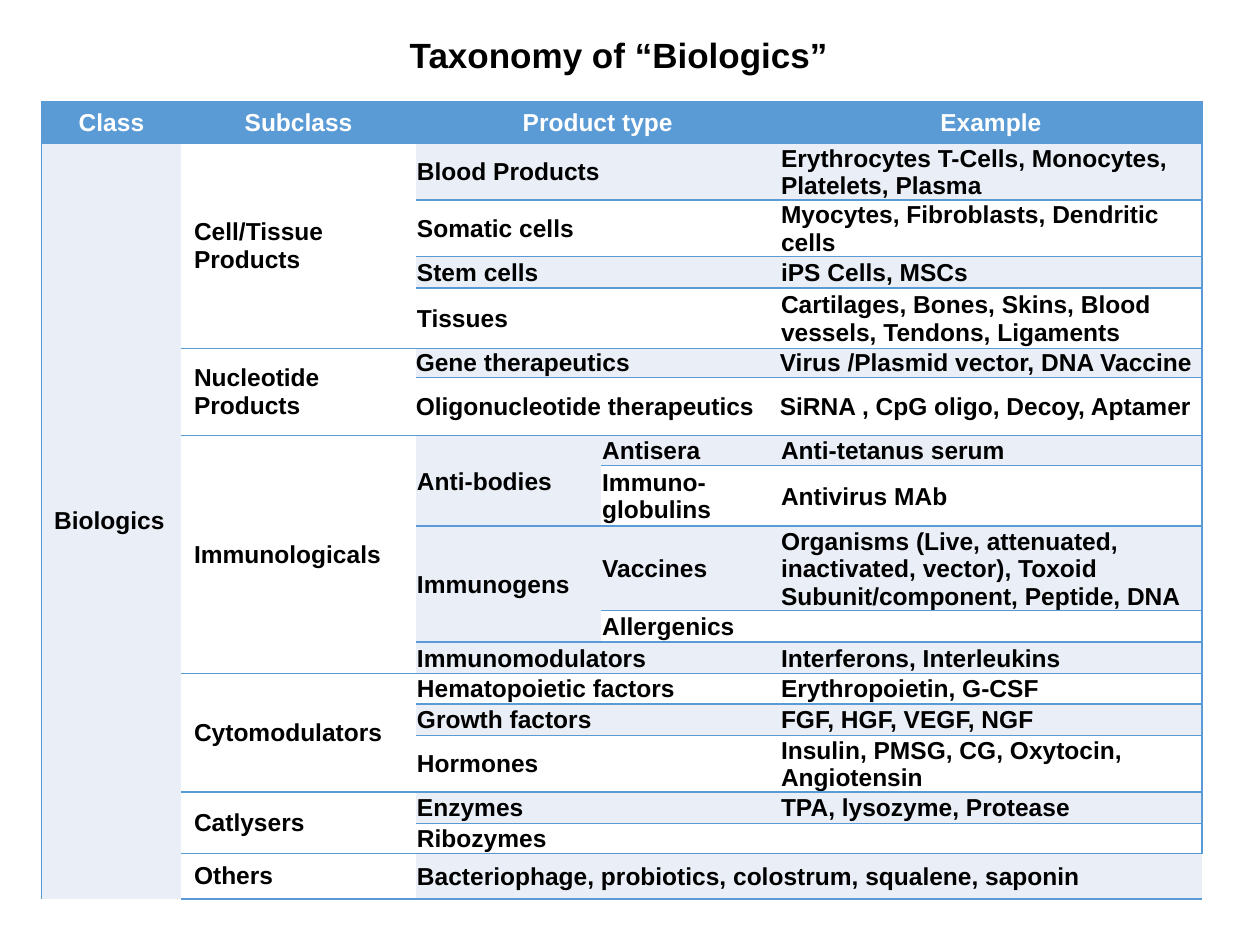
from dataclasses import dataclass

from lxml import etree
from pptx import Presentation
from pptx.dml.color import RGBColor
from pptx.enum.text import MSO_ANCHOR, PP_ALIGN
from pptx.oxml.ns import qn
from pptx.util import Inches, Pt

CENTER = PP_ALIGN.CENTER
LEFT = PP_ALIGN.LEFT
MIDDLE = MSO_ANCHOR.MIDDLE

BLUE = RGBColor(0x5B, 0x9B, 0xD5)
PALE = RGBColor(0xEA, 0xEF, 0xF7)
WHITE = RGBColor(0xFF, 0xFF, 0xFF)
BLACK = RGBColor(0x00, 0x00, 0x00)

FONT = "Arial"
PLAIN_TABLE_STYLE = "{2D5ABB26-0587-4C30-8999-92F81FD0307C}"
COLUMN_WIDTHS = [1.11, 1.86, 1.47, 1.42, 3.35]
ROW_HEIGHTS = [0.33, 0.44, 0.45, 0.25, 0.48, 0.23, 0.46, 0.24, 0.48,
               0.67, 0.25, 0.25, 0.24, 0.25, 0.45, 0.25, 0.24, 0.36]
NUCLEOTIDE_ROWS = (5, 6)
CLASS, SUBCLASS, PRODUCT, KIND, EXAMPLE = range(5)


@dataclass(frozen=True)
class Entry:
    row: int
    column: int
    text: str
    rows: int = 1
    columns: int = 1


HEADERS = [
    Entry(0, CLASS, "Class"),
    Entry(0, SUBCLASS, "Subclass"),
    Entry(0, PRODUCT, "Product type", columns=2),
    Entry(0, EXAMPLE, "Example"),
]
GROUPS = [
    Entry(1, CLASS, "Biologics", rows=17),
    Entry(1, SUBCLASS, "Cell/Tissue Products", rows=4),
    Entry(5, SUBCLASS, "Nucleotide Products", rows=2),
    Entry(7, SUBCLASS, "Immunologicals", rows=5),
    Entry(12, SUBCLASS, "Cytomodulators", rows=3),
    Entry(15, SUBCLASS, "Catlysers", rows=2),
    Entry(17, SUBCLASS, "Others"),
]
PRODUCTS = [
    Entry(1, PRODUCT, "Blood Products", columns=2),
    Entry(2, PRODUCT, "Somatic cells", columns=2),
    Entry(3, PRODUCT, "Stem cells", columns=2),
    Entry(4, PRODUCT, "Tissues", columns=2),
    Entry(5, PRODUCT, "Gene therapeutics", columns=2),
    Entry(6, PRODUCT, "Oligonucleotide therapeutics", columns=2),
    Entry(7, PRODUCT, "Anti-bodies", rows=2),
    Entry(7, KIND, "Antisera"),
    Entry(8, KIND, "Immuno-globulins"),
    Entry(9, PRODUCT, "Immunogens", rows=2),
    Entry(9, KIND, "Vaccines"),
    Entry(10, KIND, "Allergenics"),
    Entry(11, PRODUCT, "Immunomodulators", columns=2),
    Entry(12, PRODUCT, "Hematopoietic factors", columns=2),
    Entry(13, PRODUCT, "Growth factors", columns=2),
    Entry(14, PRODUCT, "Hormones", columns=2),
    Entry(15, PRODUCT, "Enzymes", columns=2),
    Entry(16, PRODUCT, "Ribozymes", columns=2),
    Entry(17, PRODUCT, "Bacteriophage, probiotics, colostrum, squalene, saponin", columns=3),
]
EXAMPLES = [
    Entry(row, EXAMPLE, text)
    for row, text in enumerate([
        "Erythrocytes T-Cells, Monocytes, Platelets, Plasma",
        "Myocytes, Fibroblasts, Dendritic cells",
        "iPS Cells, MSCs",
        "Cartilages, Bones, Skins, Blood vessels, Tendons, Ligaments",
        "Virus /Plasmid vector, DNA Vaccine",
        "SiRNA , CpG oligo, Decoy, Aptamer",
        "Anti-tetanus serum",
        "Antivirus MAb",
        "Organisms (Live, attenuated, inactivated, vector), Toxoid\n"
        "Subunit/component, Peptide, DNA",
        "",
        "Interferons, Interleukins",
        "Erythropoietin, G-CSF",
        "FGF, HGF, VEGF, NGF",
        "Insulin, PMSG, CG, Oxytocin, Angiotensin",
        "TPA, lysozyme, Protease",
        "",
    ], start=1)
]


def style_paragraph(paragraph, size: int, color: RGBColor, alignment) -> None:
    paragraph.alignment = alignment
    paragraph.font.name = FONT
    paragraph.font.size = Pt(size)
    paragraph.font.bold = True
    paragraph.font.color.rgb = color


def fill_color(entry: Entry) -> RGBColor:
    if entry.row == 0:
        return BLUE
    if entry.column == CLASS:
        return PALE
    if entry.column == SUBCLASS:
        return WHITE
    return PALE if entry.row % 2 else WHITE


def set_insets(cell, entry: Entry) -> None:
    if entry.column <= SUBCLASS:
        return
    inset = 0 if entry.row in NUCLEOTIDE_ROWS else Inches(0.01)
    cell.margin_left = cell.margin_top = cell.margin_right = inset
    cell.margin_bottom = 0


def draw_borders(cell, sides: list[str]) -> None:
    properties = cell._tc.get_or_add_tcPr()
    for position, side in enumerate(sides):
        line = etree.Element(qn(f"a:{side}"), w=str(Pt(1)))
        fill = etree.SubElement(line, qn("a:solidFill"))
        etree.SubElement(fill, qn("a:srgbClr"), val=str(BLUE))
        properties.insert(position, line)


def draw_entry(table, entry: Entry) -> None:
    last_row = entry.row + entry.rows - 1
    last_column = entry.column + entry.columns - 1
    origin = table.cell(entry.row, entry.column)
    if entry.rows * entry.columns > 1:
        origin.merge(table.cell(last_row, last_column))
    origin.text = entry.text
    origin.vertical_anchor = MIDDLE
    set_insets(origin, entry)
    header = entry.row == 0
    for paragraph in origin.text_frame.paragraphs:
        style_paragraph(paragraph, 14, WHITE if header else BLACK, CENTER if header else LEFT)
    for row in range(entry.row, last_row + 1):
        for column in range(entry.column, last_column + 1):
            cell = table.cell(row, column)
            cell.fill.solid()
            cell.fill.fore_color.rgb = fill_color(entry)
            edges = {"lnL": column == CLASS, "lnR": column == EXAMPLE,
                     "lnT": row == entry.row, "lnB": row == last_row}
            draw_borders(cell, [side for side, drawn in edges.items() if drawn])


def add_title(presentation, slide) -> None:
    width, height = presentation.slide_width, presentation.slide_height
    title = slide.shapes.title
    title.left, title.top = int(width * 0.27), int(height * 0.03)
    title.width, title.height = int(width * 0.45), int(height * 0.06)
    title.text_frame.text = "Taxonomy of “Biologics” "
    title.text_frame.vertical_anchor = MIDDLE
    title.fill.solid()
    title.fill.fore_color.rgb = WHITE
    paragraph = title.text_frame.paragraphs[0]
    paragraph.line_spacing = 0.9
    style_paragraph(paragraph, 20, BLACK, CENTER)


def add_taxonomy(slide) -> None:
    frame = slide.shapes.add_table(
        len(ROW_HEIGHTS), len(COLUMN_WIDTHS), Inches(0.33), Inches(0.81),
        Inches(sum(COLUMN_WIDTHS)), Inches(sum(ROW_HEIGHTS)))
    table = frame.table
    table.horz_banding = False
    table._tbl.tblPr.find(qn("a:tableStyleId")).text = PLAIN_TABLE_STYLE
    for column, width in zip(table.columns, COLUMN_WIDTHS):
        column.width = Inches(width)
    for row, height in zip(table.rows, ROW_HEIGHTS):
        row.height = Inches(height)
    for entry in HEADERS + GROUPS + PRODUCTS + EXAMPLES:
        draw_entry(table, entry)


def main() -> None:
    presentation = Presentation()
    presentation.slide_width = Inches(10)
    presentation.slide_height = Inches(7.5)
    slide = presentation.slides.add_slide(presentation.slide_layouts[5])
    add_title(presentation, slide)
    add_taxonomy(slide)
    presentation.save("out.pptx")


if __name__ == "__main__":
    main()
